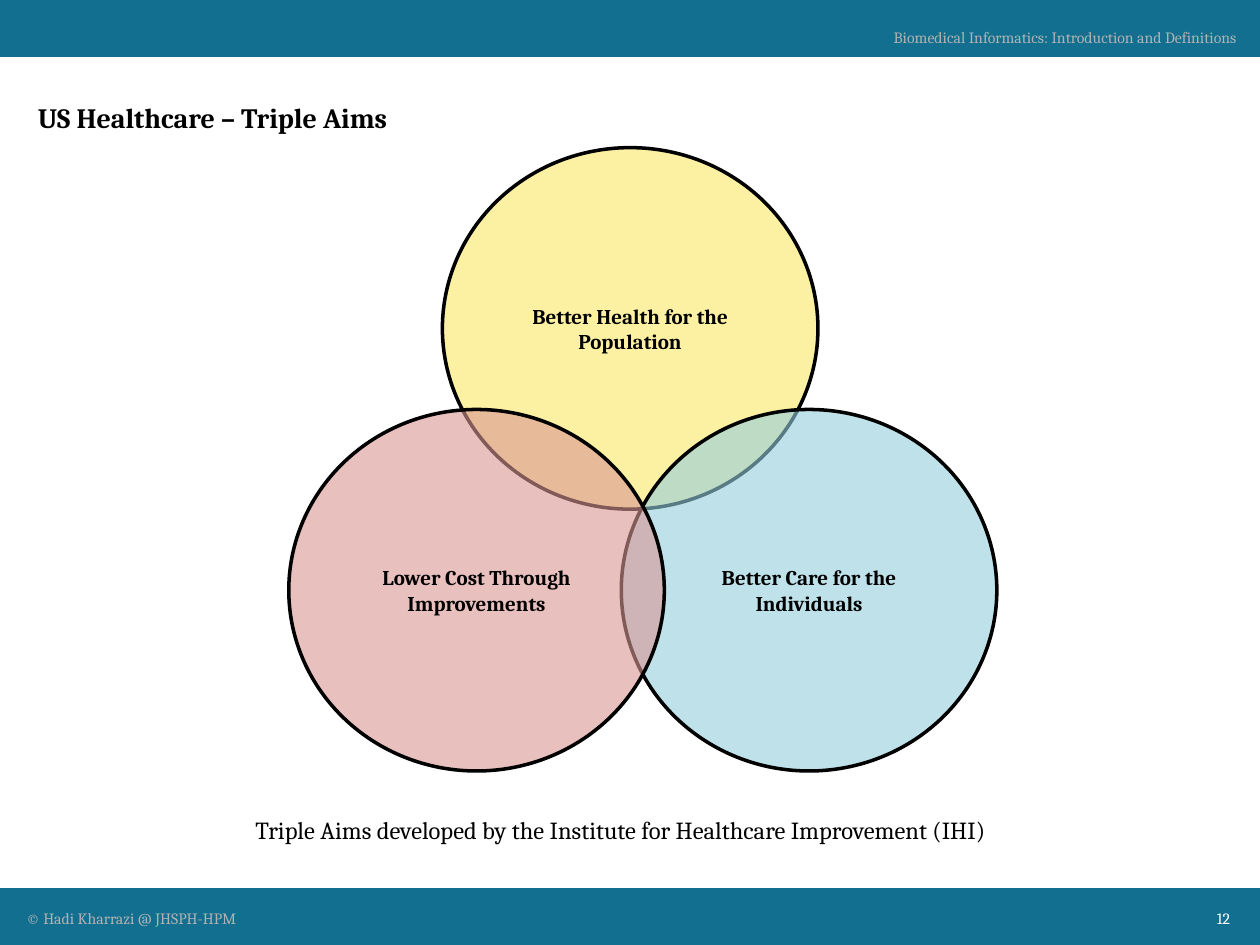
from lxml import etree
from pptx import Presentation
from pptx import util as u
from pptx.dml import color
from pptx.enum import shapes, text
from pptx.oxml import ns

BAND, INK, MUTED, WHITE = "126F90", "000000", "B2B2B2", "FFFFFF"
LEFT, CENTER, RIGHT = text.PP_ALIGN.LEFT, text.PP_ALIGN.CENTER, text.PP_ALIGN.RIGHT
TOP, MIDDLE = text.MSO_ANCHOR.TOP, text.MSO_ANCHOR.MIDDLE


def rgb(value):
    return color.RGBColor.from_string(value)


def apply(target, formats):
    for attribute, value in formats.items():
        setattr(target, attribute, value)


def points(*lengths):
    return [u.Pt(length) for length in lengths]


def write(holder, wording, size, ink, align=LEFT, bold=False, anchor=TOP, wrap=True):
    frame = holder.text_frame
    apply(frame, {"text": wording, "word_wrap": wrap, "vertical_anchor": anchor,
                  "auto_size": text.MSO_AUTO_SIZE.NONE})
    paragraph = frame.paragraphs[0]
    apply(paragraph, {"alignment": align, "space_before": u.Pt(0)})
    apply(paragraph.font, {"name": "Cambria", "size": u.Pt(size), "bold": bold})
    paragraph.font.color.rgb = rgb(ink)


def label(slide, box, wording, size, ink, **formats):
    write(slide.shapes.add_textbox(*points(*box)), wording, size, ink, **formats)


def band(slide, box):
    bar = slide.shapes.add_shape(shapes.MSO_SHAPE.RECTANGLE, *points(*box))
    bar.shadow.inherit = False
    bar.fill.solid()
    bar.fill.fore_color.rgb = rgb(BAND)
    bar.line.fill.background()


def header(slide, box):
    left, top, width, height = box
    band(slide, box)
    label(slide, (left + 484, top + 12.2, 229.5, 18),
          "Biomedical Informatics: Introduction and Definitions", 9, MUTED,
          align=RIGHT, wrap=False)


def footer(slide, box):
    left, top, width, height = box
    band(slide, box)
    label(slide, (left + 8, top + 8, 447, 18), "© Hadi Kharrazi @ JHSPH-HPM", 9, MUTED)
    label(slide, (left + 663, top + 8, 47, 18), "12", 9, WHITE, align=RIGHT)


def heading(slide, box):
    title = slide.shapes.title
    apply(title, dict(zip(("left", "top", "width", "height"), points(*box))))
    write(title, "US Healthcare – Triple Aims", 16, INK, bold=True, anchor=MIDDLE)


def aim(slide, box, wording, tint):
    circle = slide.shapes.add_shape(shapes.MSO_SHAPE.OVAL, *points(*box))
    circle.shadow.inherit = False
    circle.fill.solid()
    circle.fill.fore_color.rgb = rgb(tint)
    tint_node = circle.fill._xPr.find(ns.qn("a:solidFill"))[0]
    etree.SubElement(tint_node, ns.qn("a:alpha"), val="60000")
    circle.line.color.rgb = rgb(INK)
    circle.line.width = u.Pt(2)
    write(circle, wording, 12, INK, align=CENTER, bold=True, anchor=MIDDLE)


def triple_aims(slide, box):
    left, top, width, height = box
    across, down = 214.6, 206.6
    right, bottom = left + width - across, top + height - down
    aims = [
        (left + 87.8, top, "Better Health for the Population", "FAE866"),
        (right, bottom, "Better Care for the Individuals", "93CDDD"),
        (left, bottom, "Lower Cost Through Improvements", "D99694"),
    ]
    for x, y, wording, tint in aims:
        aim(slide, (x, y, across, down), wording, tint)


def main():
    deck = Presentation()
    apply(deck, {"slide_width": u.Pt(720), "slide_height": u.Pt(540)})
    slide = deck.slides.add_slide(deck.slide_layouts[5])
    header(slide, (0, 0, 720, 32.5))
    footer(slide, (0, 507.5, 720, 32.5))
    heading(slide, (14.4, 50.4, 692, 33))
    label(slide, (103.7, 462.2, 502, 24.5),
          "Triple Aims developed by the Institute for Healthcare Improvement (IHI)",
          14, INK, align=CENTER)
    triple_aims(slide, (165, 84.4, 404.6, 356.2))
    deck.save("out.pptx")


if __name__ == "__main__":
    main()
